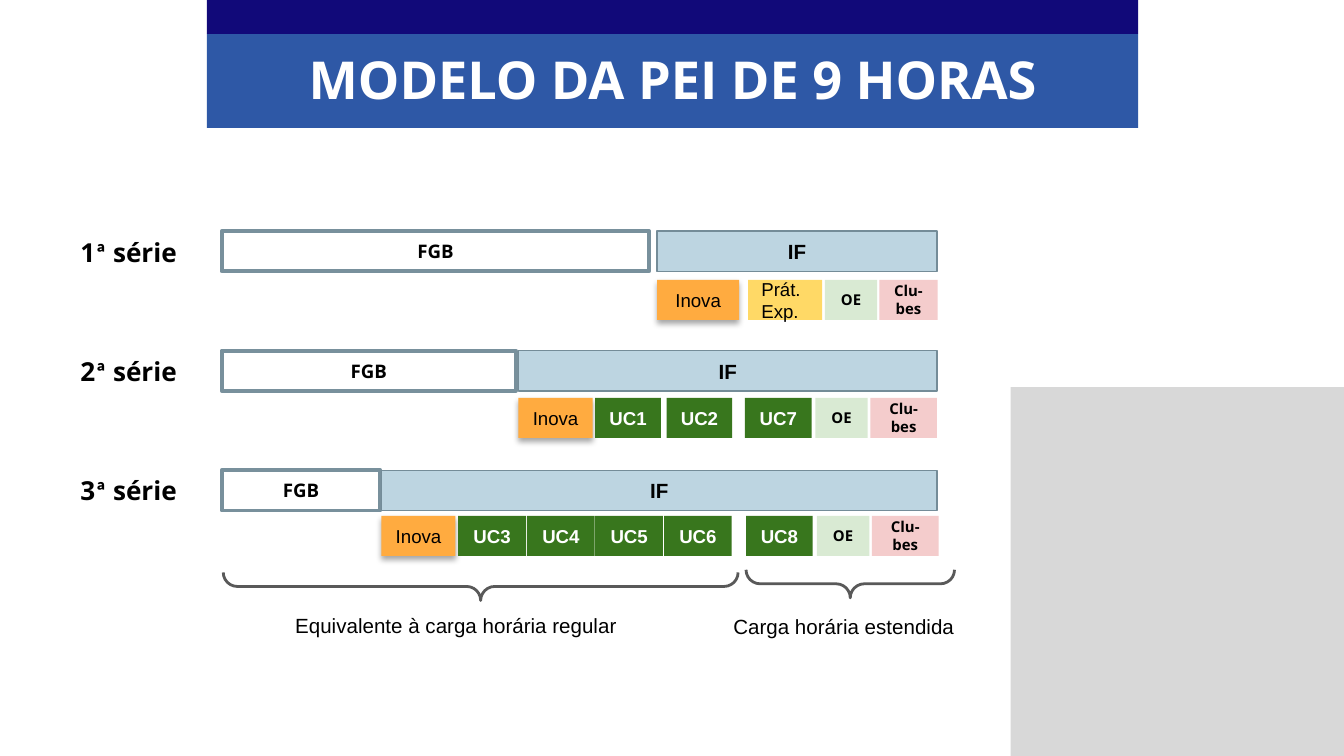
from lxml import etree
from pptx import Presentation
from pptx.dml.color import RGBColor
from pptx.enum.shapes import MSO_SHAPE
from pptx.enum.text import MSO_ANCHOR, MSO_AUTO_SIZE, PP_ALIGN
from pptx.oxml import parse_xml
from pptx.oxml.ns import nsdecls, qn
from pptx.util import Cm, Pt

RECTANGLE, LEFT_BRACE = MSO_SHAPE.RECTANGLE, MSO_SHAPE.LEFT_BRACE
LEFT, CENTER = PP_ALIGN.LEFT, PP_ALIGN.CENTER
TOP, MIDDLE = MSO_ANCHOR.TOP, MSO_ANCHOR.MIDDLE
NO_AUTO_SIZE = MSO_AUTO_SIZE.NONE

BOX_HEIGHT = 0.76
FGB_LEFT = 4.19
IF_RIGHT = 17.71

# fill, text style
UNIT_STYLES = {
    "Inova": ("FFAB40", dict(size=10)),
    "Prát.\vExp.": ("FFD966", dict(size=10, align=LEFT)),
    "UC": ("38761D", dict(size=10, color="FFFFFF", bold=True)),
    "OE": ("D9EAD3", dict(size=8, font="Open Sans", bold=True)),
    "Clu-\vbes": ("F4CCCC", dict(size=8, font="Open Sans", bold=True)),
}

# FGB width, IF left, units as (label, left, width)
SERIES = [
    (8.08, 12.42, [("Inova", 12.42, 1.55), ("Prát.\vExp.", 14.14, 1.4),
                   ("OE", 15.59, 0.99), ("Clu-\vbes", 16.62, 1.1)]),
    (5.56, 9.8, [("Inova", 9.8, 1.4), ("UC1", 11.25, 1.24),
                 ("UC2", 12.6, 1.24), ("UC7", 14.08, 1.26),
                 ("OE", 15.41, 0.99), ("Clu-\vbes", 16.45, 1.26)]),
    (3.0, 7.21, [("Inova", 7.21, 1.4), ("UC3", 8.66, 1.28),
                 ("UC4", 9.96, 1.28), ("UC5", 11.25, 1.28),
                 ("UC6", 12.55, 1.28), ("UC8", 14.1, 1.26),
                 ("OE", 15.44, 0.99), ("Clu-\vbes", 16.48, 1.26)]),
]


def rgb(value):
    return RGBColor.from_string(value)


class Canvas:
    """Holds the slide and the house style; all lengths are centimetres."""

    font, color = "Arial", "000000"

    def __init__(self, slide):
        self.slide = slide

    def format_run(self, run, size, font=None, color=None, bold=False):
        run.font.size = Pt(size)
        run.font.name = font or self.font
        run.font.color.rgb = rgb(color or self.color)
        run.font.bold = bold

    def set_text(self, shape, text, align=CENTER, anchor=MIDDLE, margin=0.13, **style):
        frame = shape.text_frame
        frame.text = text
        frame.word_wrap = True
        frame.vertical_anchor = anchor
        frame.margin_left = frame.margin_right = Cm(0.25)
        frame.margin_top = frame.margin_bottom = Cm(margin)
        paragraph = frame.paragraphs[0]
        paragraph.alignment = align
        for run in paragraph.runs:
            self.format_run(run, **style)

    def box(self, left, top, width, height, fill, line=None, line_width=0.75):
        shape = self.slide.shapes.add_shape(
            RECTANGLE, Cm(left), Cm(top), Cm(width), Cm(height))
        shape.shadow.inherit = False
        shape.fill.solid()
        shape.fill.fore_color.rgb = rgb(fill)
        if line:
            shape.line.color.rgb = rgb(line)
            shape.line.width = Pt(line_width)
        else:
            shape.line.fill.background()
        return shape

    def title(self, text, left, top, width, height):
        title = self.slide.shapes.title
        title.left, title.top = Cm(left), Cm(top)
        title.width, title.height = Cm(width), Cm(height)
        self.set_text(title, text, size=28, font="Open Sans", color="FFFFFF", bold=True)
        title.text_frame.auto_size = NO_AUTO_SIZE
        return title

    def unit(self, label, left, top, width):
        fill, style = UNIT_STYLES["UC" if label.startswith("UC") else label]
        shape = self.box(left, top, width, BOX_HEIGHT, fill)
        self.set_text(shape, label, **style)
        if label == "Inova":
            self.drop_shadow(shape)

    def drop_shadow(self, shape):
        effects = shape.element.spPr.find(qn("a:effectLst"))
        effects.append(parse_xml(
            f'<a:outerShdw {nsdecls("a")} blurRad="40000" dist="23000" dir="5400000" '
            'rotWithShape="0"><a:srgbClr val="000000"><a:alpha val="35000"/>'
            '</a:srgbClr></a:outerShdw>'))

    def set_opacity(self, shape, percent):
        color = shape.element.spPr.find(qn("a:solidFill"))[0]
        etree.SubElement(color, qn("a:alpha")).set("val", str(percent * 1000))

    def brace(self, left, top, width, depth=0.53):
        """Draws a brace that opens upwards, as a left brace turned on its side."""
        offset = (width - depth) / 2
        shape = self.slide.shapes.add_shape(
            LEFT_BRACE, Cm(left + offset), Cm(top - offset), Cm(depth), Cm(width))
        shape.rotation = 270
        shape.adjustments[0] = shape.adjustments[1] = 0.5
        shape.shadow.inherit = False
        shape.fill.background()
        shape.line.color.rgb = rgb("595959")
        shape.line.width = Pt(1.5)

    def label(self, text, left, top, width, height, **style):
        shape = self.slide.shapes.add_textbox(Cm(left), Cm(top), Cm(width), Cm(height))
        self.set_text(shape, text, align=LEFT, anchor=TOP, margin=0.25, **style)
        return shape

    def series_label(self, number, top):
        style = dict(size=14, bold=True)
        shape = self.label(str(number), 1.27, top, 2.72, 1.12, font="Open Sans", **style)
        paragraph = shape.text_frame.paragraphs[0]
        for text, font in (("ª", "Calibri"), (" série", "Open Sans")):
            run = paragraph.add_run()
            run.text = text
            self.format_run(run, font=font, **style)


def main():
    presentation = Presentation()
    presentation.slide_width, presentation.slide_height = Cm(25.4), Cm(14.29)
    title_only = presentation.slide_layouts[5]
    canvas = Canvas(presentation.slides.add_slide(title_only))

    band = canvas.box(3.91, 0.64, 17.6, 1.78, "2E58A6")
    canvas.box(3.91, 0, 17.6, 0.64, "110979")
    title = canvas.title("MODELO DA PEI DE 9 HORAS", 3.91, 0.76, 17.6, 1.45)
    band.element.addnext(title.element)

    for index, (fgb_width, if_left, units) in enumerate(SERIES):
        top = 4.37 + 2.26 * index
        canvas.series_label(index + 1, 4.22 + 2.25 * index)
        fgb = canvas.box(FGB_LEFT, top, fgb_width, BOX_HEIGHT, "FFFFFF", "78909C", 2)
        canvas.set_text(fgb, "FGB", size=10, font="Open Sans", bold=True)
        itinerary = canvas.box(
            if_left, top, IF_RIGHT - if_left, BOX_HEIGHT, "BDD5E1", "748C98")
        canvas.set_text(itinerary, "IF", size=11, bold=True)
        for label, left, width in units:
            canvas.unit(label, left, 5.29 + 2.23 * index, width)

    canvas.brace(4.22, 10.82, 9.73)
    canvas.label("Equivalente à carga horária regular", 5.33, 11.35, 9.09, 0.99, size=11)
    canvas.brace(14.1, 10.77, 3.94)
    canvas.label("Carga horária estendida", 13.61, 11.38, 6.91, 0.99, size=11)

    panel = canvas.box(19.1, 7.32, 6.3, 6.97, "BFBFBF")
    canvas.set_opacity(panel, 60)

    presentation.save("out.pptx")


if __name__ == "__main__":
    main()
